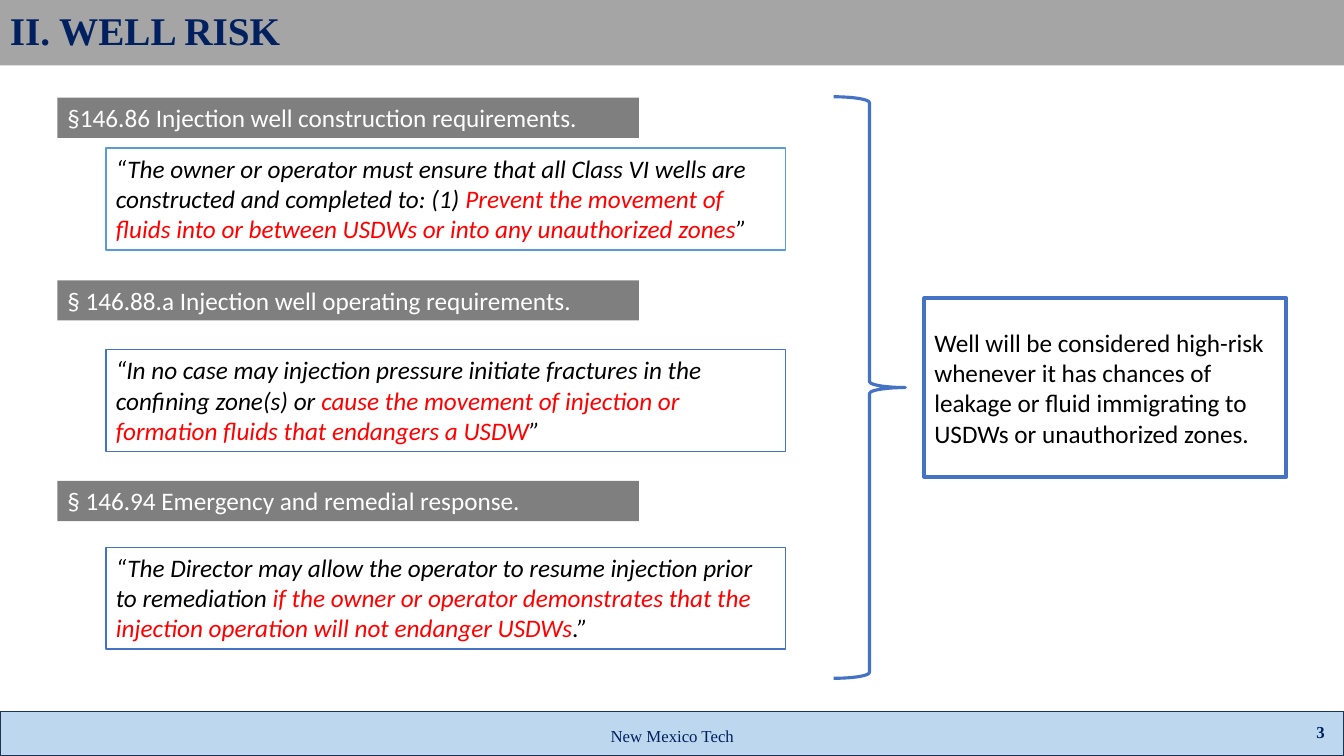
from lxml.etree import SubElement
from pptx import Presentation
from pptx.dml.color import RGBColor
from pptx.enum.shapes import MSO_SHAPE as Kind
from pptx.enum.text import MSO_ANCHOR as Anchor, PP_ALIGN as Align
from pptx.oxml.ns import qn
from pptx.util import Inches, Pt

WIDE, HIGH = Inches(13.333), Inches(7.5)
COL, ROW = WIDE / 100, HIGH / 100
NAVY, BLUE, RED, BLACK, WHITE = "002060", "4472C4", "FF0000", "000000", "FFFFFF"
SERIF, SANS = "Times New Roman", "Calibri"
BAR, QUOTE = 5.33, 13.47

RULES = [
    (12.93, 6.67, "5B9BD5", "§146.86 Injection well construction requirements.", [
        "“The owner or operator must ensure that all Class VI wells are constructed and completed to: (1) ",
        "Prevent the movement of fluids into or between USDWs or into any unauthorized zones",
        "”"]),
    (37.07, 9.2, BLUE, "§ 146.88.a Injection well operating requirements.", [
        "“In no case may injection pressure initiate fractures in the confining zone(s) or ",
        "cause the movement of injection or formation fluids that endangers a USDW",
        "”"]),
    (63.6, 8.8, BLUE, "§ 146.94 Emergency and remedial response.", [
        "“The Director may allow the operator to resume injection prior to remediation ",
        "if the owner or operator demonstrates that the injection operation will not endanger USDWs",
        ".”"]),
]
RESULT = ("Well will be considered high-risk whenever it has chances of leakage "
          "or fluid immigrating to USDWs or unauthorized zones.")


def tint(color, code):
    """Set a colour from a hex string."""
    color.rgb = RGBColor.from_string(code)


def place(box):
    """Turn columns and rows into slide lengths."""
    x, y, w, h = box
    return [round(n) for n in (x * COL, y * ROW, w * COL, h * ROW)]


def draw(slide, box, fill=None, line=None, width=1, kind=Kind.RECTANGLE):
    """Add a flat preset shape."""
    shape = slide.shapes.add_shape(kind, *place(box))
    shape.shadow.inherit = False
    if fill:
        shape.fill.solid()
        tint(shape.fill.fore_color, fill)
    else:
        shape.fill.background()
    if line:
        tint(shape.line.color, line)
        shape.line.width = Pt(width)
    else:
        shape.line.fill.background()
    return shape


def write(shape, parts, size=18, face=SANS, color=BLACK, bold=False,
          italic=False, align=Align.LEFT, anchor=Anchor.MIDDLE):
    """Write one paragraph, with every second part in red."""
    frame = shape.text_frame
    frame.word_wrap = True
    frame.vertical_anchor = anchor
    para = frame.paragraphs[0]
    para.alignment = align
    font = para.font
    font.size, font.name, font.bold, font.italic = Pt(size), face, bold, italic
    tint(font.color, color)
    for i, part in enumerate(parts):
        run = para.add_run()
        run.text = part
        tint(run.font.color, RED if i % 2 else color)
    return para


def head(slide, box):
    """Draw the title band."""
    para = write(draw(slide, box, "A5A5A5"), ["II. WELL RISK"], 28, SERIF, NAVY, True)
    para.line_spacing = 0.9


def foot(slide, box):
    """Draw the footer band with its name and page number."""
    x, y, w, h = box
    draw(slide, box, "BDD7EE", "1E3256")
    name = slide.shapes.add_textbox(*place((x + 33.15, y + 0.53, 33.75, BAR)))
    write(name, ["New Mexico Tech"], 12, SERIF, NAVY, align=Align.CENTER)
    page = slide.shapes.add_textbox(*place((x + w - 23.2, y, 22.5, BAR)))
    write(page, ["3"], 12, SERIF, NAVY, True, align=Align.RIGHT)


def rule(slide, box, gap, line, title, parts):
    """Draw a section heading with its quote below."""
    x, y, w, h = box
    bar = draw(slide, (x, y, 43.27, BAR), BLACK)
    paint = bar.fill._xPr.find(qn("a:solidFill"))[0]
    SubElement(paint, qn("a:alpha")).set("val", "50000")
    write(bar, [title], color=WHITE, anchor=Anchor.TOP)
    quote = draw(slide, (x + 3.6, y + gap, w - 3.6, h - gap), WHITE, line)
    write(quote, parts, italic=True, anchor=Anchor.TOP)


def result(slide, box):
    """Draw the brace and the conclusion it points to."""
    x, y, w, h = box
    draw(slide, (x, y, 5.33, h), line=BLUE, width=2.25, kind=Kind.RIGHT_BRACE)
    note = draw(slide, (x + 6.75, y + 26.67, w - 6.75, 23.6), WHITE, BLUE, 3)
    write(note, [RESULT])


def main():
    """Build and save the slide."""
    deck = Presentation()
    deck.slide_width, deck.slide_height = WIDE, HIGH
    slide = deck.slides.add_slide(deck.slide_layouts[6])
    foot(slide, (0, 94.13, 100, 5.87))
    head(slide, (0, 0, 100, 8.67))
    for top, gap, line, title, parts in RULES:
        rule(slide, (4.28, top, 54.15, gap + QUOTE), gap, line, title, parts)
    result(slide, (62.03, 12.8, 33.68, 76.93))
    deck.save("out.pptx")


if __name__ == "__main__":
    main()
